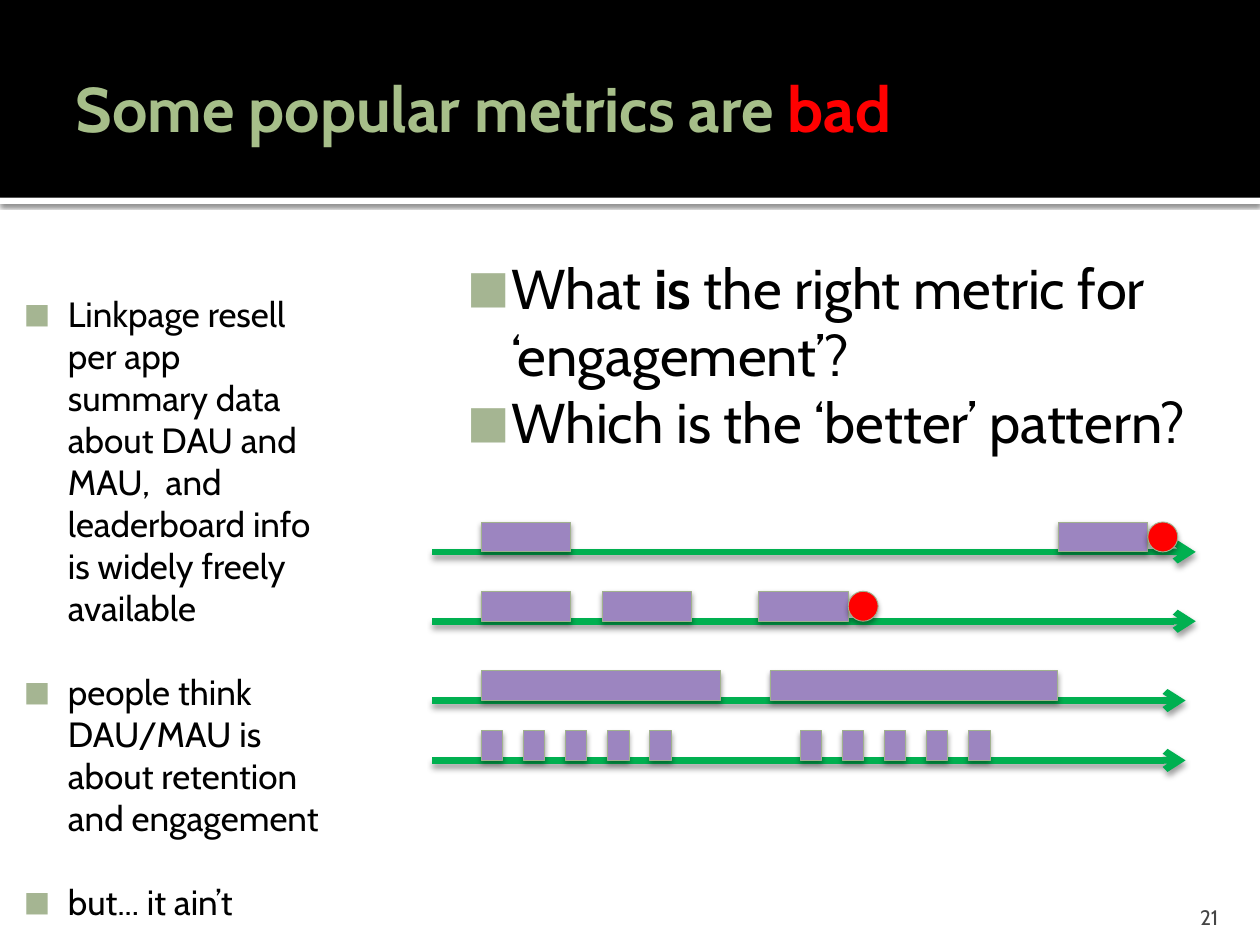
from lxml import etree
from pptx import Presentation
from pptx.dml.color import RGBColor
from pptx.enum.shapes import MSO_CONNECTOR, MSO_SHAPE
from pptx.enum.text import MSO_ANCHOR, MSO_AUTO_SIZE, PP_ALIGN
from pptx.oxml.ns import qn
from pptx.util import Pt

RECTANGLE, OVAL = MSO_SHAPE.RECTANGLE, MSO_SHAPE.OVAL
STRAIGHT = MSO_CONNECTOR.STRAIGHT
MIDDLE, BOTTOM, TOP = MSO_ANCHOR.MIDDLE, MSO_ANCHOR.BOTTOM, MSO_ANCHOR.TOP
LEFT, RIGHT = PP_ALIGN.LEFT, PP_ALIGN.RIGHT
NO_AUTOFIT = MSO_AUTO_SIZE.NONE

BLACK = RGBColor(0x00, 0x00, 0x00)
WHITE = RGBColor(0xFF, 0xFF, 0xFF)
RED = RGBColor(0xFF, 0x00, 0x00)
GREEN = RGBColor(0x00, 0xB0, 0x50)
PURPLE = RGBColor(0x9C, 0x85, 0xC0)
OUTLINE = RGBColor(0xA1, 0xB2, 0x8E)
TITLE_GREEN = RGBColor(0xA6, 0xBE, 0x89)
BULLET_GREEN = RGBColor(0xA5, 0xB5, 0x92)
GRAY = RGBColor(0x45, 0x45, 0x45)

FONT = "Cabin"
TRACK_LEFT = 247
SESSION_LEFT = 275
SESSION_WIDTH = 51.1
SESSION_HEIGHT = 17.1
VISIT_WIDTH = 12.2
VISIT_STEP = 24.1
VISITS = [
    (start + VISIT_STEP * index, VISIT_WIDTH)
    for start in (SESSION_LEFT, 457.2)
    for index in range(5)
]

TRACKS = [
    (315.4, 683.3, [(SESSION_LEFT, SESSION_WIDTH), (604.8, SESSION_WIDTH)], True),
    (355, 683.3, [(SESSION_LEFT, SESSION_WIDTH), (344, SESSION_WIDTH),
                  (433.6, SESSION_WIDTH)], True),
    (400.3, 677.5, [(SESSION_LEFT, 136.8), (440, 164.5)], False),
    (434.5, 677.5, VISITS, False),
]


def add_shadow(shape, opacity, blur, distance):
    effects = etree.SubElement(shape.element.spPr, qn("a:effectLst"))
    shadow = etree.SubElement(
        effects, qn("a:outerShdw"), blurRad=str(Pt(blur)),
        dist=str(Pt(distance)), dir="5400000", rotWithShape="0")
    color = etree.SubElement(shadow, qn("a:srgbClr"), val=str(BLACK))
    etree.SubElement(color, qn("a:alpha"), val=str(opacity * 1000))


def add_band(slide, top, height, color):
    band = slide.shapes.add_shape(RECTANGLE, 0, Pt(top), Pt(720), Pt(height))
    band.shadow.inherit = False
    band.fill.solid()
    band.fill.fore_color.rgb = color
    band.line.fill.background()
    slide.shapes.element.insert(2, band.element)
    return band


def add_header(slide):
    add_band(slide, 0, 113, BLACK)
    strip = add_band(slide, 113, 3.6, WHITE)
    strip.shadow.inherit = True
    add_shadow(strip, 60, 2.5, 0.8)


def place_text(box, left, top, width, height, insets, anchor):
    box.left, box.top, box.width, box.height = map(Pt, (left, top, width, height))
    frame = box.text_frame
    frame.word_wrap = True
    frame.auto_size = NO_AUTOFIT
    frame.vertical_anchor = anchor
    (frame.margin_left, frame.margin_top,
     frame.margin_right, frame.margin_bottom) = map(Pt, insets)
    return frame


def style_paragraph(para, size, color, align=LEFT, bold=False):
    para.alignment = align
    para.font.name = FONT
    para.font.size = Pt(size)
    para.font.bold = bold
    para.font.color.rgb = color


def add_bullet(para):
    properties = para._p.get_or_add_pPr()
    properties.set("marL", str(Pt(34.5)))
    properties.set("indent", str(Pt(-25.2)))
    color = etree.SubElement(properties, qn("a:buClr"))
    etree.SubElement(color, qn("a:srgbClr"), val=str(BULLET_GREEN))
    etree.SubElement(properties, qn("a:buSzPct"), val="80000")
    etree.SubElement(properties, qn("a:buFont"), typeface=FONT)
    etree.SubElement(properties, qn("a:buChar"), char="■")


def fill_title(title):
    frame = place_text(title, 36, 12.2, 648, 98.6, (7.2, 3.6, 3.6, 3.6), MIDDLE)
    para = frame.paragraphs[0]
    style_paragraph(para, 36, TITLE_GREEN, bold=True)
    para.add_run().text = "Some popular metrics are "
    verdict = para.add_run()
    verdict.text = "bad"
    verdict.font.color.rgb = RED


def fill_list(body, bounds, items, size, gap):
    frame = place_text(body, *bounds, (4.3, 7.2, 7.2, 3.6), TOP)
    for index, spans in enumerate(items):
        para = frame.add_paragraph() if index else frame.paragraphs[0]
        para.space_before = Pt(gap if index else 0)
        add_bullet(para)
        style_paragraph(para, size, BLACK)
        for text, bold in spans:
            span = para.add_run()
            span.text = text
            if bold:
                span.font.bold = True


def add_mark(slide, kind, left, baseline, width, color):
    mark = slide.shapes.add_shape(
        kind, Pt(left), Pt(baseline - SESSION_HEIGHT), Pt(width), Pt(SESSION_HEIGHT))
    mark.fill.solid()
    mark.fill.fore_color.rgb = color
    mark.line.color.rgb = OUTLINE
    mark.line.width = Pt(0.5)
    add_shadow(mark, 38, 3.1, 2)


def add_track(slide, baseline, right, sessions, ends_in_dot):
    track = slide.shapes.add_connector(
        STRAIGHT, Pt(TRACK_LEFT), Pt(baseline), Pt(right), Pt(baseline))
    track.line.color.rgb = GREEN
    track.line.width = Pt(3.78)
    etree.SubElement(track.line._get_or_add_ln(), qn("a:tailEnd"), type="arrow")
    add_shadow(track, 38, 3.5, 2)
    for left, width in sessions:
        add_mark(slide, RECTANGLE, left, baseline, width, PURPLE)
    if ends_in_dot:
        add_mark(slide, OVAL, left + width, baseline, SESSION_HEIGHT, RED)


def add_page_number(slide):
    box = slide.shapes.add_textbox(0, 0, 0, 0)
    frame = place_text(box, 645.8, 509.8, 57.6, 21.6, (7.2, 3.6, 7.2, 0), BOTTOM)
    para = frame.paragraphs[0]
    para.text = "21"
    style_paragraph(para, 12, GRAY, RIGHT)


def main():
    deck = Presentation()
    deck.slide_width, deck.slide_height = Pt(720), Pt(540)
    slide = deck.slides.add_slide(deck.slide_layouts[3])
    title, questions, claims = slide.placeholders
    add_header(slide)
    fill_title(title)
    fill_list(questions, (253.4, 137.5, 466.6, 359.3), [
        [("What ", False), ("is", True),
         (" the right metric for ‘engagement’?", False)],
        [("Which is the ‘better’ pattern?", False)],
    ], 32, 0)
    fill_list(claims, (0, 160, 194.4, 336), [
        [("Linkpage resell per app summary data about DAU and MAU,  and "
          "leaderboard info is widely freely available", False)],
        [("people think DAU/MAU is about retention and engagement", False)],
        [("but... it ain’t", False)],
    ], 20, 24)
    for track in TRACKS:
        add_track(slide, *track)
    add_page_number(slide)
    deck.save("out.pptx")


if __name__ == "__main__":
    main()
